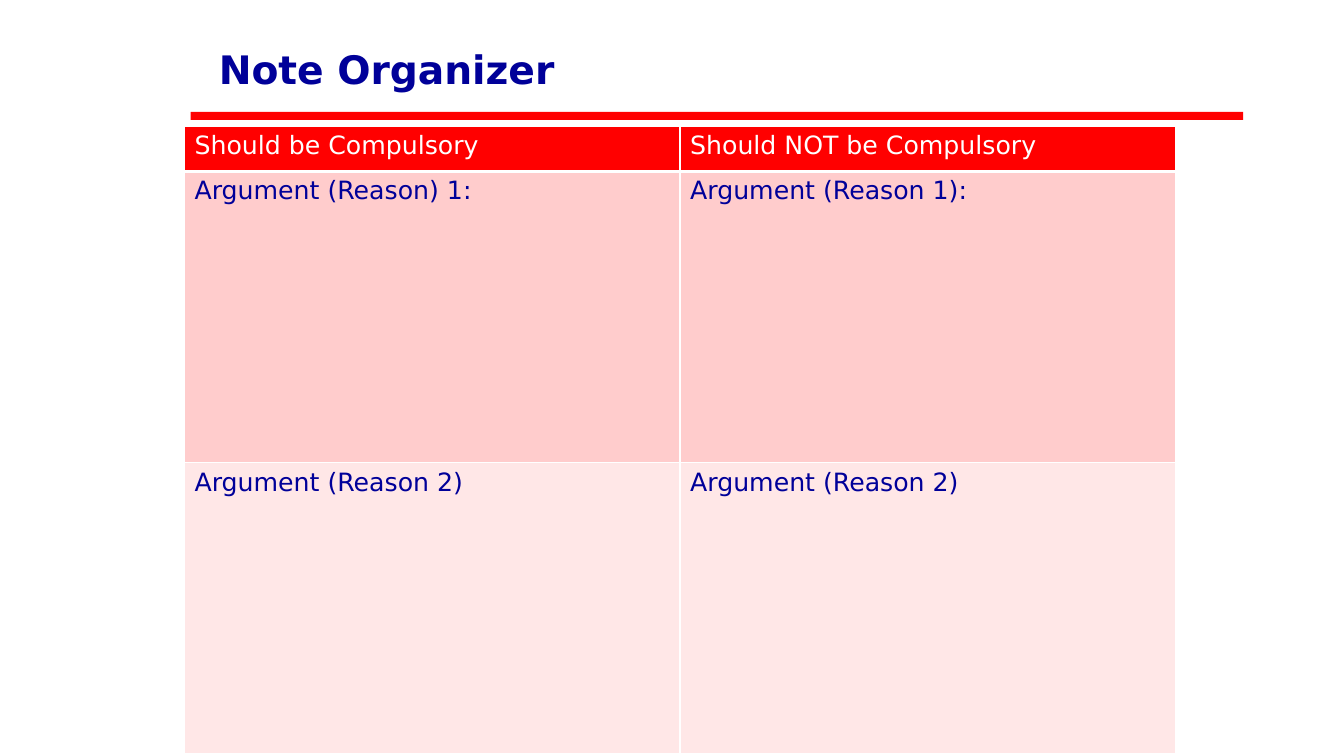
from dataclasses import dataclass

from lxml import etree
from pptx import Presentation
from pptx.dml.color import RGBColor
from pptx.enum.shapes import MSO_SHAPE
from pptx.enum.text import MSO_ANCHOR, MSO_AUTO_SIZE, PP_ALIGN
from pptx.oxml.ns import qn
from pptx.util import Inches, Pt

RECT = MSO_SHAPE.RECTANGLE
BOTTOM = MSO_ANCHOR.BOTTOM
LEFT = PP_ALIGN.LEFT
NO_FIT = MSO_AUTO_SIZE.NONE


@dataclass(frozen=True)
class Theme:
    font: str = "DejaVu Sans"
    navy: str = "000099"
    red: str = "FF0000"
    white: str = "FFFFFF"
    bands: tuple = ("FFCCCC", "FFE7E7")
    title: int = 28
    body: int = 18


THEME = Theme()
ROWS = [
    ("Should be Compulsory", "Should NOT be Compulsory"),
    ("Argument (Reason) 1:", "Argument (Reason 1):"),
    ("Argument (Reason 2)", "Argument (Reason 2)"),
]


def add_run(para, text, size, color, bold=False):
    run = para.add_run()
    run.text = text
    font = run.font
    font.name, font.size, font.bold = THEME.font, Pt(size), bold
    font.color.rgb = RGBColor.from_string(color)


def add_edges(cell, base):
    """Draw white cell borders, with the given weight at the bottom."""
    props = cell._tc.get_or_add_tcPr()
    for side, weight in (("L", 1), ("R", 1), ("T", 1), ("B", base)):
        line = etree.SubElement(props, qn(f"a:ln{side}"), w=str(Pt(weight)))
        fill = etree.SubElement(line, qn("a:solidFill"))
        etree.SubElement(fill, qn("a:srgbClr"), val=THEME.white)


def add_head(slide, left, top, width, height):
    """Place the title and the rule below it."""
    rule = slide.shapes.add_shape(
        RECT, Inches(left), Inches(top + height - 0.08), Inches(width), Inches(0.08))
    rule.shadow.inherit = False
    rule.fill.solid()
    rule.fill.fore_color.rgb = RGBColor.from_string(THEME.red)
    rule.line.fill.background()

    title = slide.shapes.title
    title.left, title.top = Inches(left + 0.28), Inches(top)
    title.width, title.height = Inches(9), Inches(0.7)
    frame = title.text_frame
    frame.margin_left = frame.margin_right = 0
    frame.margin_top = frame.margin_bottom = 0
    frame.vertical_anchor, frame.auto_size = BOTTOM, NO_FIT
    frame.word_wrap = True
    para = frame.paragraphs[0]
    para.alignment, para.line_spacing = LEFT, 1.0
    add_run(para, "Note Organizer", THEME.title, THEME.navy, bold=True)


def add_notes(slide, left, top, width, height, head=0.45):
    """Place the table: a header row above equal rows for arguments."""
    table = slide.shapes.add_table(
        len(ROWS), len(ROWS[0]), Inches(left), Inches(top),
        Inches(width), Inches(height)).table
    deep = (height - head) / (len(ROWS) - 1)
    for r, texts in enumerate(ROWS):
        table.rows[r].height = Inches(deep if r else head)
        fill = THEME.bands[(r - 1) % 2] if r else THEME.red
        ink = THEME.navy if r else THEME.white
        for c, text in enumerate(texts):
            cell = table.cell(r, c)
            add_edges(cell, 1 if r else 3)
            cell.fill.solid()
            cell.fill.fore_color.rgb = RGBColor.from_string(fill)
            add_run(cell.text_frame.paragraphs[0], text, THEME.body, ink)


def main():
    deck = Presentation()
    deck.slide_width, deck.slide_height = Inches(13.33), Inches(7.5)
    slide = deck.slides.add_slide(deck.slide_layouts[5])
    add_head(slide, 1.89, 0.22, 10.44, 0.97)
    add_notes(slide, 1.83, 1.25, 9.83, 6.23)
    deck.save("out.pptx")


if __name__ == "__main__":
    main()
